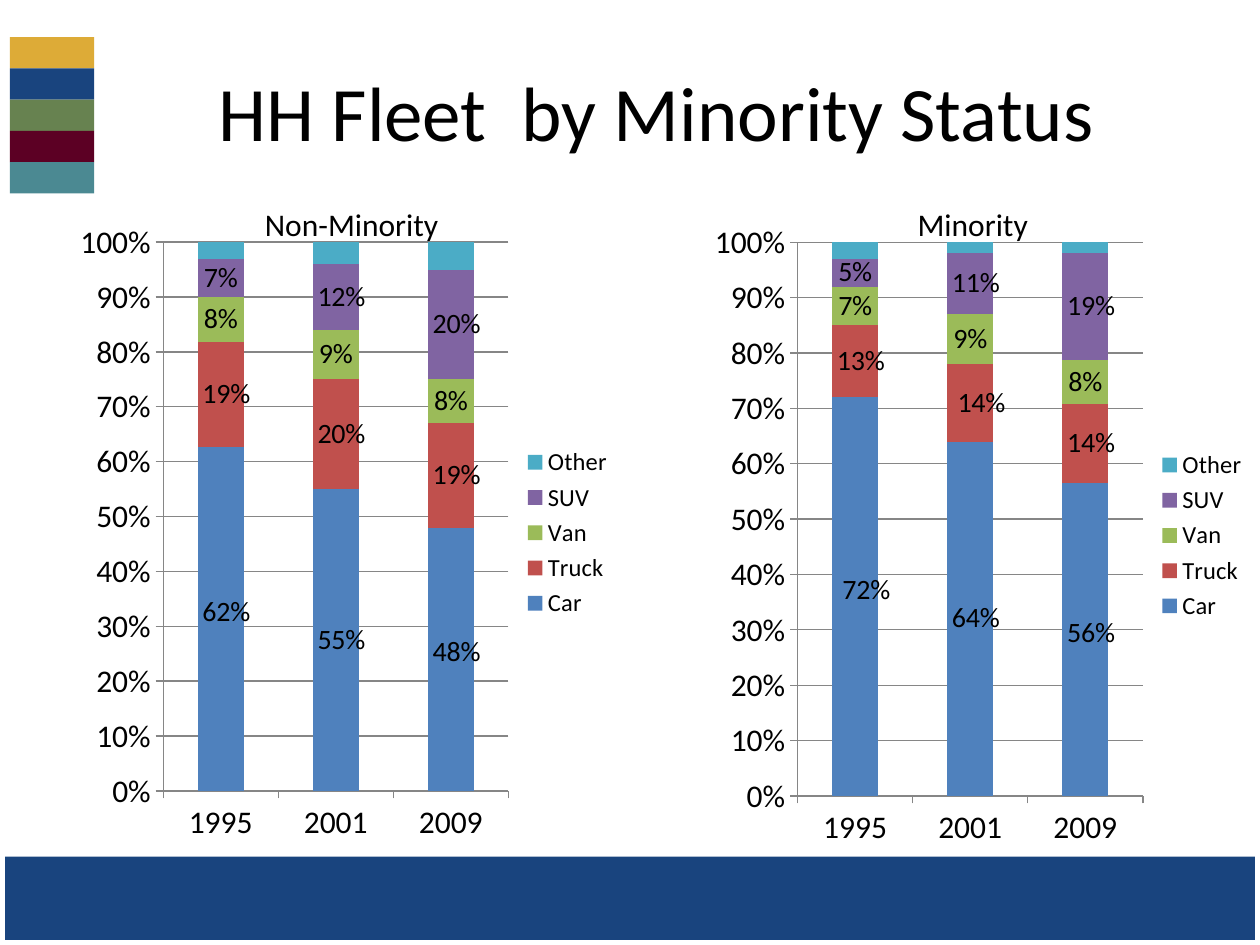
import copy
from dataclasses import dataclass

import pptx
import pptx.chart.data
import pptx.dml.color
import pptx.enum.chart
import pptx.enum.shapes
import pptx.enum.text
import pptx.oxml
import pptx.oxml.ns
import pptx.util

Cm = pptx.util.Cm
Pt = pptx.util.Pt
qn = pptx.oxml.ns.qn


@dataclass(frozen=True)
class Theme:
    font: str = "Calibri"
    ink: str = "000000"
    paper: str = "FFFFFF"
    navy: str = "19447E"
    axis: str = "868686"
    bands: tuple = ("DDAB37", "19447E", "678250", "5C0024", "4B8992")
    vehicles: tuple = ("4F81BD", "C0504D", "9BBB59", "8064A2", "4BACC6")
    title_size: int = 44
    body_size: int = 18
    label_size: int = 16
    legend_size: int = 14


THEME = Theme()
YEARS = ("1995", "2001", "2009")
VEHICLES = ("Car", "Truck", "Van", "SUV", "Other")

MINORITY = (
    (0.72, 0.64, 0.56),
    (0.13, 0.14, 0.14),
    (0.07, 0.09, 0.08),
    (0.05, 0.11, 0.19),
    (0.03, 0.02, 0.02),
)
NON_MINORITY = (
    (0.62, 0.55, 0.48),
    (0.19, 0.20, 0.19),
    (0.08, 0.09, 0.08),
    (0.07, 0.12, 0.20),
    (0.03, 0.04, 0.05),
)

# Label moves by vehicle and year index, as shares of the chart size
MINORITY_SHIFTS = {
    "Car": {0: (0.02, -0.01), 1: (0.01, 0), 2: (0.01, -0.01)},
    "Truck": {0: (0.01, 0), 1: (0.02, 0), 2: (0.01, 0)},
    "SUV": {1: (0.01, 0), 2: (0.01, 0)},
}
NON_MINORITY_SHIFTS = {
    "Car": {0: (0.01, -0.01), 1: (0.01, 0), 2: (0.01, -0.01)},
    "Truck": {0: (0.01, 0), 1: (0.01, 0), 2: (0.01, 0)},
    "SUV": {1: (0.01, 0), 2: (0.01, 0)},
}


def color(code):
    return pptx.dml.color.RGBColor.from_string(code)


def style_font(font, size):
    font.name = THEME.font
    font.size = Pt(size)
    font.color.rgb = color(THEME.ink)


def add_rectangle(page, left, top, width, height, fill=None, line=None, weight=0):
    box = page.shapes.add_shape(
        pptx.enum.shapes.MSO_SHAPE.RECTANGLE, Cm(left), Cm(top), Cm(width), Cm(height))
    box.shadow.inherit = False
    if fill:
        box.fill.solid()
        box.fill.fore_color.rgb = color(fill)
    else:
        box.fill.background()
    if line:
        box.line.color.rgb = color(line)
        box.line.width = Pt(weight)
    else:
        box.line.fill.background()


def add_text(page, text, left, top, width, height, size):
    box = page.shapes.add_textbox(Cm(left), Cm(top), Cm(width), Cm(height))
    frame = box.text_frame
    frame.word_wrap = True
    frame.vertical_anchor = pptx.enum.text.MSO_ANCHOR.MIDDLE
    para = frame.paragraphs[0]
    para.alignment = pptx.enum.text.PP_ALIGN.CENTER
    span = para.add_run()
    span.text = text
    style_font(span.font, size)


def manual_layout(**settings):
    """Return a c:layout element holding the given manual settings."""
    items = "".join(f'<c:{name} val="{value}"/>' for name, value in settings.items())
    return pptx.oxml.parse_xml(
        f'<c:layout {pptx.oxml.ns.nsdecls("c")}>'
        f"<c:manualLayout>{items}</c:manualLayout></c:layout>")


def shift_labels(labels, shifts):
    """Give the listed points their own label, moved from its usual place."""
    shared = labels._element
    parts = [part for part in shared if part.tag != qn("c:showLeaderLines")]
    for position, (point, (across, down)) in enumerate(shifts.items()):
        label = pptx.oxml.parse_xml(
            f'<c:dLbl {pptx.oxml.ns.nsdecls("c")}><c:idx val="{point}"/></c:dLbl>')
        label.append(manual_layout(x=across, y=down))
        label.extend(copy.deepcopy(parts))
        shared.insert(position, label)


def style_series(series, fill, shifts):
    series.format.fill.solid()
    series.format.fill.fore_color.rgb = color(fill)
    if series.name == "Other":
        return
    labels = series.data_labels
    labels.show_value = True
    labels.number_format = "0%"
    labels.number_format_is_linked = False
    style_font(labels.font, THEME.label_size)
    shift_labels(labels, shifts.get(series.name, {}))


def style_axes(chart):
    values = chart.value_axis
    values.minimum_scale, values.maximum_scale, values.major_unit = 0, 1, 0.1
    values.has_major_gridlines = True
    values.tick_labels.number_format = "0%"
    values.tick_labels.number_format_is_linked = False
    for line in (values.format.line, values.major_gridlines.format.line,
                 chart.category_axis.format.line):
        line.color.rgb = color(THEME.axis)
        line.width = Pt(0.75)


def add_fleet_chart(page, shares, shifts, left, top, width, height):
    data = pptx.chart.data.CategoryChartData(number_format="0%")
    data.categories = YEARS
    for vehicle, values in zip(VEHICLES, shares):
        data.add_series(vehicle, values)
    chart = page.shapes.add_chart(
        pptx.enum.chart.XL_CHART_TYPE.COLUMN_STACKED_100,
        Cm(left), Cm(top), Cm(width), Cm(height), data).chart
    chart.has_title = False
    style_font(chart.font, THEME.body_size)
    style_axes(chart)

    # Columns
    plot = chart.plots[0]
    plot.gap_width = 150
    plot.overlap = 100
    plot.vary_by_categories = False
    for series, fill in zip(plot.series, THEME.vehicles):
        style_series(series, fill, shifts)

    # Legend
    chart.has_legend = True
    chart.legend.position = pptx.enum.chart.XL_LEGEND_POSITION.RIGHT
    chart.legend.include_in_layout = False
    style_font(chart.legend.font, THEME.legend_size)

    # Fixed plot area inside the axes
    area = chart._chartSpace.find(".//" + qn("c:plotArea"))
    for old in area.findall(qn("c:layout")):
        area.remove(old)
    area.insert(0, manual_layout(layoutTarget="inner", xMode="edge", yMode="edge",
                                 x=0.17, y=0.05, w=0.62, h=0.85))


def main():
    deck = pptx.Presentation()
    deck.slide_width, deck.slide_height = Cm(25.4), Cm(19.05)
    page = deck.slides.add_slide(deck.slide_layouts[6])

    # Footer bar, colour bands and page border
    add_rectangle(page, 0, 17.27, 25.4, 1.78, THEME.navy)
    for row, fill in enumerate(THEME.bands):
        add_rectangle(page, 0.2, 0.75 + row * 0.63, 1.7, 0.63, fill)
    add_rectangle(page, 0, 0, 25.4, 19.05, line=THEME.paper, weight=6)

    add_text(page, "HH Fleet  by Minority Status", 2.34, 0.64, 21.79, 3.18,
             THEME.title_size)

    # Charts, then their captions on top
    add_fleet_chart(page, MINORITY, MINORITY_SHIFTS, 14.17, 4.23, 11.23, 13.13)
    add_fleet_chart(page, NON_MINORITY, NON_MINORITY_SHIFTS, 1.38, 4.23, 11.23, 13.02)
    for caption, left in (("Minority", 15.8), ("Non-Minority", 3.28)):
        add_text(page, caption, left, 3.98, 7.62, 1.07, THEME.body_size)

    deck.save("out.pptx")


if __name__ == "__main__":
    main()
